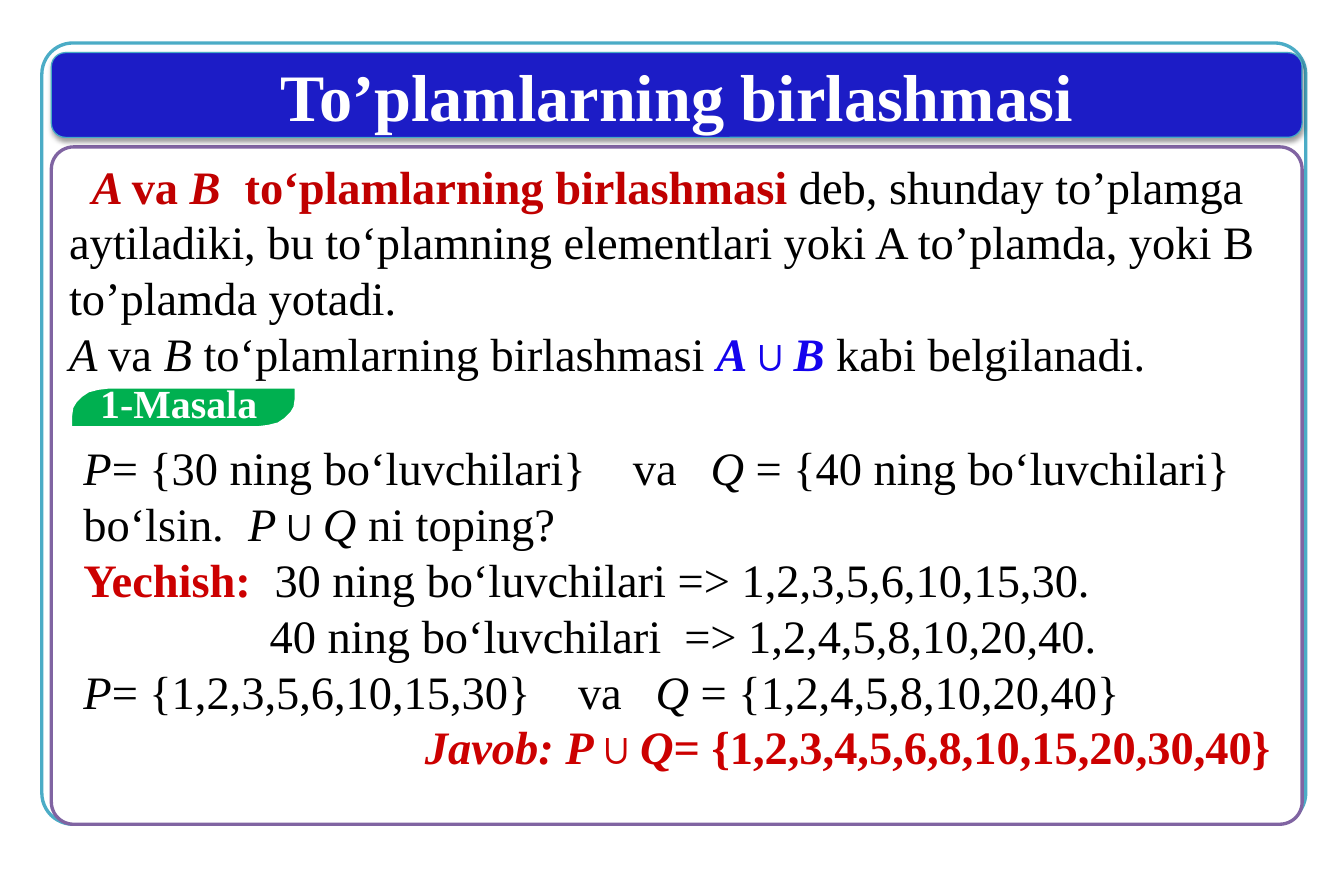
from lxml import etree
from pptx import Presentation
from pptx import util as u
from pptx.dml.color import RGBColor
from pptx.enum import shapes, text
from pptx.oxml.ns import qn

FONT = "Times New Roman"
BLACK, WHITE, RED, CRIMSON, BLUE = "000000", "FFFFFF", "CC0000", "C00000", "1403ED"

STYLES = {
    "plain": dict(color=BLACK),
    "italic": dict(color=BLACK, italic=True),
    "term": dict(color=CRIMSON, bold=True),
    "term italic": dict(color=CRIMSON, bold=True, italic=True),
    "sign": dict(color=BLUE, bold=True),
    "sign italic": dict(color=BLUE, bold=True, italic=True),
    "answer": dict(color=RED, bold=True),
    "answer italic": dict(color=RED, bold=True, italic=True),
    "title": dict(color=WHITE, bold=True, size=40),
    "label": dict(color=WHITE, bold=True, size=24),
}

# Each paragraph: tab stops in inches, alignment, runs of (text, style)
TITLE = [([], "CENTER", [("To’plamlarning birlashmasi", "title")])]
LABEL = [([], "LEFT", [("1-Masala", "label")])]
DEFINITION = [
    ([0.19, 1.47], "LEFT", [
        ("\tA ", "term italic"), ("va", "term"), (" B\t", "term italic"),
        ("to‘plamlarning birlashmasi ", "term"),
        ("deb, shunday to’plamga aytiladiki, bu to‘plamning elementlari "
         "yoki A to’plamda, yoki B to’plamda yotadi.", "plain")]),
    ([], "LEFT", [
        ("A ", "italic"), ("va", "plain"), (" B ", "italic"),
        ("to‘plamlarning birlashmasi ", "plain"),
        ("A", "sign italic"), ("∪", "sign"), ("B ", "sign italic"),
        ("kabi belgilanadi.", "plain")]),
]
PROBLEM = [
    ([1.38, 4.6, 5.25], "LEFT", [
        ("P", "italic"), ("= {30 ning bo‘luvchilari}\tva\t", "plain"),
        ("Q", "italic"), (" = {40 ning bo‘luvchilari} bo‘lsin.\t", "plain"),
        ("P", "italic"), ("∪", "plain"), ("Q ", "italic"), ("ni toping?", "plain")]),
    ([1.6], "LEFT", [
        ("Yechish:", "answer"),
        ("\t30 ning bo‘luvchilari => 1,2,3,5,6,10,15,30.", "plain")]),
    ([1.56, 5.03], "LEFT", [
        ("\t40 ning bo‘luvchilari\t=> 1,2,4,5,8,10,20,40.", "plain")]),
    ([4.14, 4.79], "LEFT", [
        ("P", "italic"), ("= {1,2,3,5,6,10,15,30}\tva\t", "plain"),
        ("Q", "italic"), (" = {1,2,4,5,8,10,20,40}", "plain")]),
    ([], "RIGHT", [
        ("Javob: P", "answer italic"), ("∪", "answer"), ("Q", "answer italic"),
        ("= {1,2,3,4,5,6,8,10,15,20,30,40}", "answer")]),
]

# Position, corner, fill, line colour, line width
PANELS = [
    ((0.35, 0.36, 10.58, 6.54), 0.04, WHITE, "4BACC6", 2),
    ((0.43, 1.23, 10.47, 5.67), 0.033, WHITE, "8064A2", 2),
    ((0.43, 0.44, 10.47, 0.71), 0.167, "1C1CC6", "46AAC5", 0.75),
]
TEXT_BOXES = [
    ((0.48, 1.27, 10.32, 1.99), DEFINITION),
    ((0.6, 3.63, 10.13, 2.93), PROBLEM),
]
TAG_AT = (0.59, 3.24, 1.89, 0.34)
LABEL_AT = (0.74, 3.17, 1.57, 0.42)
# Top edge and rounded upper-left corner, relative to the tag
TAG_HALF = [(1.89, 0), (0.31, 0), (0.23, 0.01), (0.15, 0.03),
            (0.09, 0.07), (0.04, 0.12), (0.01, 0.17), (0, 0.24)]


def rgb(code):
    return RGBColor.from_string(code)


def inches(values):
    return [u.Inches(value) for value in values]


def paint(shape, fill, line, width):
    shape.shadow.inherit = False
    shape.fill.solid()
    shape.fill.fore_color.rgb = rgb(fill)
    shape.line.color.rgb = rgb(line)
    shape.line.width = u.Pt(width)


def write(frame, paragraphs, **frame_format):
    frame.word_wrap = True
    for name, value in frame_format.items():
        setattr(frame, name, value)
    for number, (stops, align, runs) in enumerate(paragraphs):
        para = frame.add_paragraph() if number else frame.paragraphs[0]
        para.alignment = text.PP_ALIGN[align]
        if stops:
            tabs = etree.SubElement(para._p.get_or_add_pPr(), qn("a:tabLst"))
            for stop in stops:
                etree.SubElement(tabs, qn("a:tab"), pos=str(u.Inches(stop)), algn="l")
        for words, style in runs:
            span = para.add_run()
            span.text = words
            look = dict(name=FONT, size=28, bold=False, italic=False) | STYLES[style]
            span.font.color.rgb = rgb(look.pop("color"))
            look["size"] = u.Pt(look["size"])
            for name, value in look.items():
                setattr(span.font, name, value)


def add_shadow(shape):
    effects = shape._element.spPr.find(qn("a:effectLst"))
    shadow = etree.SubElement(effects, qn("a:outerShdw"), blurRad=str(u.Pt(3.1)),
                              dist=str(u.Pt(1.6)), dir="5400000", rotWithShape="0")
    color = etree.SubElement(shadow, qn("a:srgbClr"), val=BLACK)
    etree.SubElement(color, qn("a:alpha"), val="38000")


def main():
    deck = Presentation()
    deck.slide_width, deck.slide_height = inches((11.25, 7.5))
    page = deck.slides.add_slide(deck.slide_layouts[5])

    for place, corner, *look in PANELS:
        panel = page.shapes.add_shape(shapes.MSO_SHAPE.ROUNDED_RECTANGLE, *inches(place))
        panel.adjustments[0] = corner
        paint(panel, *look)
    title_bar = panel
    add_shadow(title_bar)

    title = page.shapes.title
    title_bar._element.addnext(title._element)
    title.left, title.top, title.width, title.height = inches(PANELS[-1][0])
    write(title.text_frame, TITLE, vertical_anchor=text.MSO_ANCHOR.MIDDLE,
          auto_size=text.MSO_AUTO_SIZE.NONE)

    for place, paragraphs in TEXT_BOXES:
        box = page.shapes.add_textbox(*inches(place))
        write(box.text_frame, paragraphs, auto_size=text.MSO_AUTO_SIZE.SHAPE_TO_FIT_TEXT)

    left, top, width, height = TAG_AT
    outline = TAG_HALF + [(width - x, height - y) for x, y in TAG_HALF]
    points = [inches((left + x, top + y)) for x, y in outline]
    builder = page.shapes.build_freeform(*points[0])
    builder.add_line_segments(points[1:], close=True)
    paint(builder.convert_to_shape(), "00B050", WHITE, 2)

    label = page.shapes.add_textbox(*inches(LABEL_AT))
    write(label.text_frame, LABEL, margin_left=u.Inches(0.1), margin_top=0,
          margin_right=0, margin_bottom=0, vertical_anchor=text.MSO_ANCHOR.TOP,
          auto_size=text.MSO_AUTO_SIZE.NONE)

    deck.save("out.pptx")


if __name__ == "__main__":
    main()
